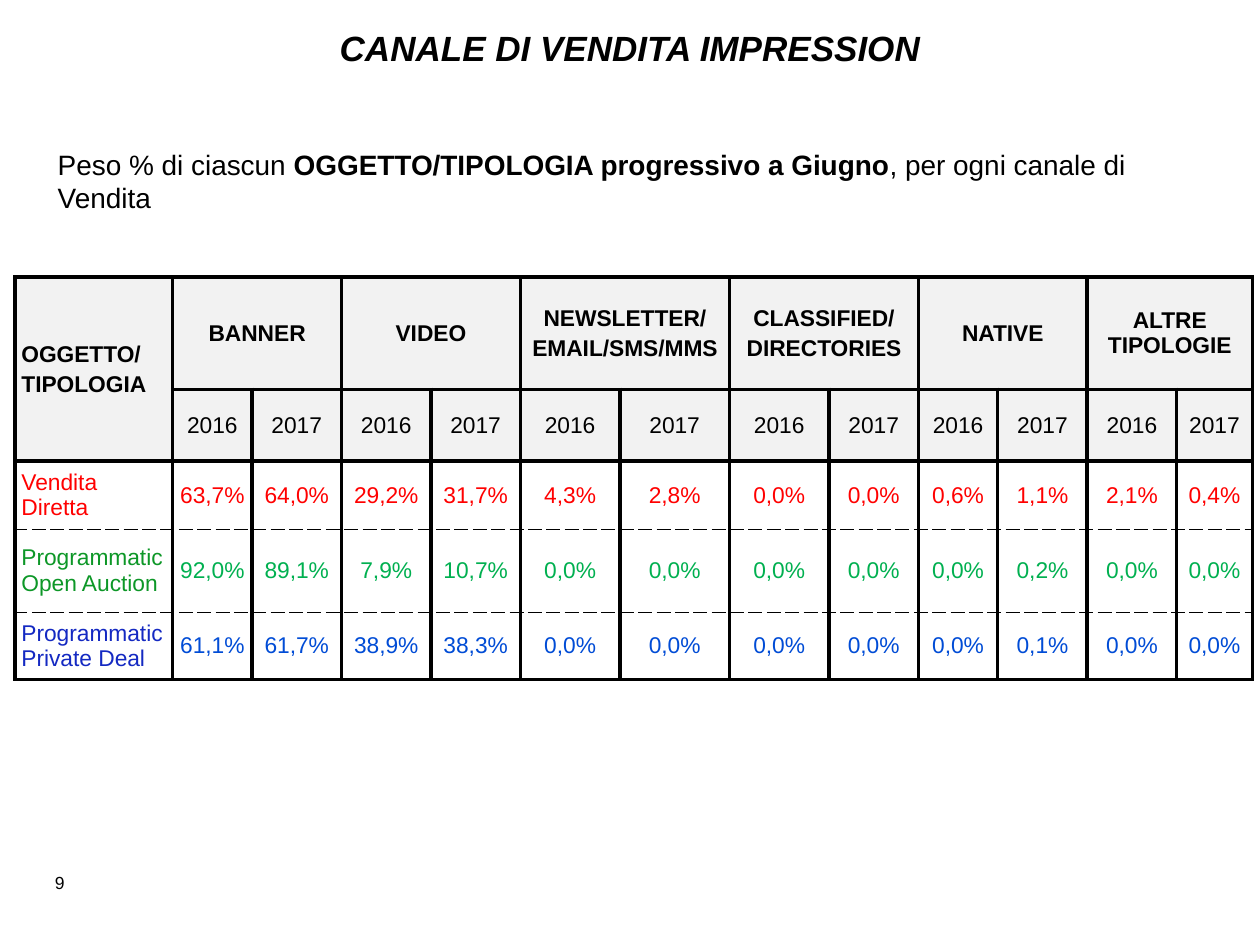
from dataclasses import dataclass

from lxml.etree import SubElement
from pptx import Presentation
from pptx.dml.color import RGBColor
from pptx.enum.text import MSO_ANCHOR, MSO_AUTO_SIZE, PP_ALIGN
from pptx.oxml.ns import qn
from pptx.util import Inches, Pt


@dataclass(frozen=True)
class Theme:
    font: str = "Arial"
    ink: str = "000000"
    paper: str = "FFFFFF"
    header: str = "F2F2F2"
    title: float = 20
    intro: float = 16
    cell: float = 13
    footer: float = 10
    rule: float = 2.25
    hairline: float = 0.25
    line_gap: float = 2.6


@dataclass(frozen=True)
class Channel:
    label: str
    label_color: str
    value_color: str
    shares: str


CATEGORIES = [
    ["BANNER"],
    ["VIDEO"],
    ["NEWSLETTER/", "EMAIL/SMS/MMS"],
    ["CLASSIFIED/", "DIRECTORIES"],
    ["NATIVE"],
    ["ALTRE TIPOLOGIE"],
]
YEARS = ["2016", "2017"]
CHANNELS = [
    Channel("Vendita Diretta", "FF0000", "FF0000",
            "63,7% 64,0% 29,2% 31,7% 4,3% 2,8% 0,0% 0,0% 0,6% 1,1% 2,1% 0,4%"),
    Channel("Programmatic Open Auction", "0D9727", "00B050",
            "92,0% 89,1% 7,9% 10,7% 0,0% 0,0% 0,0% 0,0% 0,0% 0,2% 0,0% 0,0%"),
    Channel("Programmatic Private Deal", "1429C2", "004CD6",
            "61,1% 61,7% 38,9% 38,3% 0,0% 0,0% 0,0% 0,0% 0,0% 0,1% 0,0% 0,0%"),
]
COLUMN_INCHES = [1.25, 0.63, 0.71, 0.71, 0.71, 0.79, 0.87, 0.79, 0.71, 0.63, 0.71, 0.71, 0.6]
ROW_INCHES = [0.89, 0.56, 0.54, 0.66, 0.53]
HEADER_ROWS = 2


class SlideBuilder:
    def __init__(self, theme, width, height):
        self.theme = theme
        self.deck = Presentation()
        self.deck.slide_width, self.deck.slide_height = Inches(width), Inches(height)
        self.slide = self.deck.slides.add_slide(self.deck.slide_layouts[6])

    def across(self, percent):
        return round(self.deck.slide_width * percent / 100)

    def down(self, percent):
        return round(self.deck.slide_height * percent / 100)

    def add_runs(self, frame, paragraphs, size, color, align, italic=False):
        for index, runs in enumerate(paragraphs):
            paragraph = frame.add_paragraph() if index else frame.paragraphs[0]
            paragraph.alignment = align
            if index:
                paragraph.space_before = Pt(self.theme.line_gap)
            for wording, bold in runs:
                run = paragraph.add_run()
                run.text = wording
                run.font.name = self.theme.font
                run.font.size = Pt(size)
                run.font.bold = bold
                run.font.italic = italic
                run.font.color.rgb = RGBColor.from_string(color)

    def text(self, left, top, width, height, runs, size, align=PP_ALIGN.LEFT, italic=False):
        box = self.slide.shapes.add_textbox(
            self.across(left), self.down(top), self.across(width), self.down(height))
        box.text_frame.word_wrap = True
        box.text_frame.auto_size = MSO_AUTO_SIZE.SHAPE_TO_FIT_TEXT
        self.add_runs(box.text_frame, [runs], size, self.theme.ink, align, italic)

    def table(self, left, top, columns, rows):
        table = self.slide.shapes.add_table(
            len(rows), len(columns), self.across(left), self.down(top),
            sum(map(Inches, columns)), sum(map(Inches, rows))).table
        table.first_row = table.horz_banding = False
        for column, width in zip(table.columns, columns):
            column.width = Inches(width)
        for row, height in zip(table.rows, rows):
            row.height = Inches(height)
        for r in range(len(rows)):
            for c in range(len(columns)):
                cell = table.cell(r, c)
                for side in ("L", "R"):
                    self.border(cell, side)
                self.border(cell, "T", dashed=r > HEADER_ROWS)
                self.border(cell, "B", dashed=HEADER_ROWS <= r < len(rows) - 1)
                cell.fill.solid()
                cell.fill.fore_color.rgb = RGBColor.from_string(
                    self.theme.header if r < HEADER_ROWS else self.theme.paper)
        return table

    def border(self, cell, side, dashed=False):
        width = self.theme.hairline if dashed else self.theme.rule
        line = SubElement(cell._tc.get_or_add_tcPr(), qn(f"a:ln{side}"), w=str(Pt(width)))
        SubElement(SubElement(line, qn("a:solidFill")), qn("a:srgbClr"), val=self.theme.ink)
        SubElement(line, qn("a:prstDash"), val="sysDash" if dashed else "solid")

    def cell(self, cell, lines, color=None, align=PP_ALIGN.CENTER, bold=False, inset=0.05):
        cell.vertical_anchor = MSO_ANCHOR.MIDDLE
        cell.margin_left = cell.margin_right = Inches(inset)
        cell.margin_top = cell.margin_bottom = Inches(inset)
        self.add_runs(cell.text_frame, [[(line, bold)] for line in lines],
                      self.theme.cell, color or self.theme.ink, align)


def fill_sales_table(builder, sales):
    sales.cell(0, 0).merge(sales.cell(1, 0))
    builder.cell(sales.cell(0, 0), ["OGGETTO/", "TIPOLOGIA"], align=PP_ALIGN.LEFT, bold=True)
    for index, category in enumerate(CATEGORIES):
        first = 1 + index * len(YEARS)
        sales.cell(0, first).merge(sales.cell(0, first + len(YEARS) - 1))
        builder.cell(sales.cell(0, first), category, bold=True)
        for offset, year in enumerate(YEARS):
            builder.cell(sales.cell(1, first + offset), [year])
    for row, channel in enumerate(CHANNELS, HEADER_ROWS):
        builder.cell(sales.cell(row, 0), [channel.label], channel.label_color, PP_ALIGN.LEFT)
        for column, share in enumerate(channel.shares.split(), 1):
            builder.cell(sales.cell(row, column), [share], channel.value_color, inset=0.01)


def main():
    theme = Theme()
    builder = SlideBuilder(theme, 10, 7.5)
    builder.text(1.8, 91.6, 4.3, 3.6, [("9", False)], theme.footer, PP_ALIGN.RIGHT)
    builder.text(0, 2.13, 100, 5.87, [("CANALE DI VENDITA IMPRESSION", True)],
                 theme.title, PP_ALIGN.CENTER, italic=True)
    fill_sales_table(builder, builder.table(1.2, 29.33, COLUMN_INCHES, ROW_INCHES))
    builder.text(3.6, 14.93, 92.9, 11.87, [
        ("Peso % di ciascun ", False),
        ("OGGETTO/TIPOLOGIA progressivo a Giugno", True),
        (", per ogni canale di Vendita", False),
    ], theme.intro)
    builder.deck.save("out.pptx")


if __name__ == "__main__":
    main()
